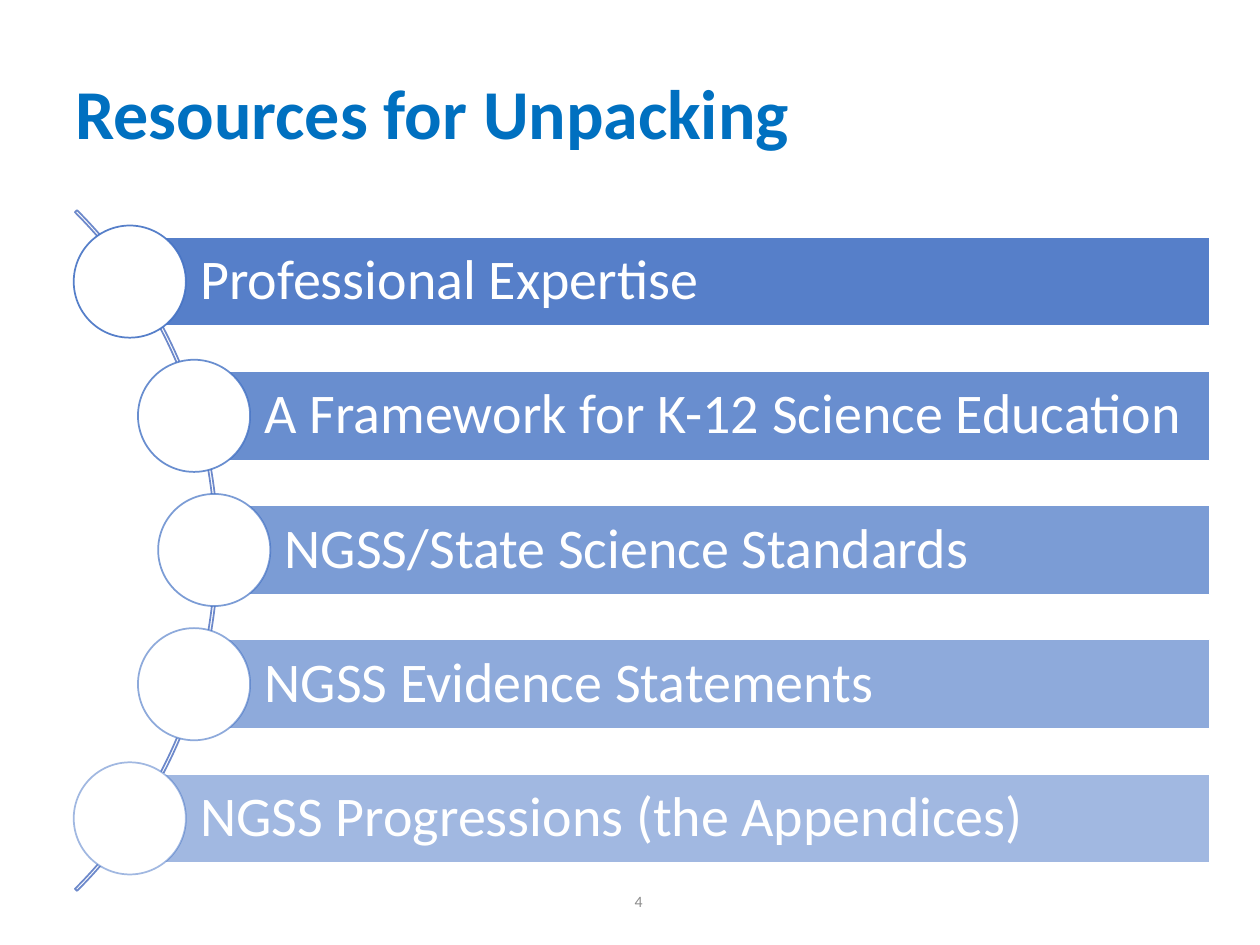
"""Build the "Resources for Unpacking" slide: five bars fanned along an arc."""
from lxml.etree import SubElement
from pptx import Presentation
from pptx.dml.color import RGBColor
from pptx.enum.shapes import MSO_SHAPE
from pptx.enum.text import MSO_ANCHOR, PP_ALIGN
from pptx.oxml.ns import qn
from pptx.util import Inches, Pt

THEME = {
    "font": "Calibri",
    "accent": "4472C4", "arc": "6D89CB", "title": "0070C0",
    "white": "FFFFFF", "muted": "8C8C8C",
    "title_size": 40, "bar_size": 32, "number_size": 9, "line": 1,
}


def write(s, text, size, color, bold=False, align=PP_ALIGN.LEFT, spacing=0.9, left=0.1):
    tf = s.text_frame
    frame = {"word_wrap": True, "vertical_anchor": MSO_ANCHOR.MIDDLE, "margin_left": Inches(left),
             "margin_right": Inches(0.09), "margin_top": Inches(0.09), "margin_bottom": Inches(0.09)}
    for name, value in frame.items():
        setattr(tf, name, value)
    p = tf.paragraphs[0]
    p.alignment, p.line_spacing = align, spacing
    r = p.add_run()
    r.text = text
    for name, value in {"name": THEME["font"], "size": Pt(THEME[size]), "bold": bold}.items():
        setattr(r.font, name, value)
    r.font.color.rgb = RGBColor.from_string(THEME[color])


def draw(shapes, kind, box, fill, line, opacity=100):
    s = shapes.add_shape(kind, *map(Inches, box))
    s.shadow.inherit = False
    if fill:
        s.fill.solid()
        s.fill.fore_color.rgb = RGBColor.from_string(THEME[fill])
    else:
        s.fill.background()
    s.line.color.rgb = RGBColor.from_string(THEME[line])
    s.line.width = Pt(THEME["line"])
    for clr in s._element.spPr.iter(qn("a:srgbClr")):
        if clr.get("val") == THEME["accent"]:
            SubElement(clr, qn("a:alpha"), val=str(opacity * 1000))
    return s


prs = Presentation()
prs.slide_width, prs.slide_height = Inches(10), Inches(7.5)
shapes = prs.slides.add_slide(prs.slide_layouts[6]).shapes

number = shapes.add_textbox(Inches(2.94), Inches(6.95), Inches(2.25), Inches(0.4))
write(number, "4", "number_size", "muted", align=PP_ALIGN.RIGHT, spacing=1.0)
title = shapes.add_textbox(Inches(0.5), Inches(0.3), Inches(9), Inches(1.25))
write(title, "Resources for Unpacking", "title_size", "title", bold=True)

arc = draw(shapes, MSO_SHAPE.BLOCK_ARC, (-5.91, 0.55, 7.64, 7.64), None, "arc")
for i, value in enumerate((189, 27, 0.003)):
    arc.adjustments[i] = value

RESOURCES = [
    ("Professional Expertise", 1.03),
    ("A Framework for K-12 Science Education", 1.54),
    ("NGSS/State Science Standards", 1.7),
    ("NGSS Evidence Statements", 1.54),
    ("NGSS Progressions (the Appendices)", 1.03),
]
RIGHT, FIRST_TOP, PITCH, BAR_HEIGHT, CIRCLE = 9.6, 1.88, 1.065, 0.71, 0.89
for i, (text, left) in enumerate(RESOURCES):
    top = FIRST_TOP + i * PITCH
    opacity = 90 - 10 * i
    bar = draw(shapes, MSO_SHAPE.RECTANGLE, (left, top, RIGHT - left, BAR_HEIGHT),
               "accent", "white", opacity)
    write(bar, text, "bar_size", "white", left=0.56)
    draw(shapes, MSO_SHAPE.OVAL,
         (left - CIRCLE / 2, top + (BAR_HEIGHT - CIRCLE) / 2, CIRCLE, CIRCLE),
         "white", "accent", opacity)

prs.save("out.pptx")
